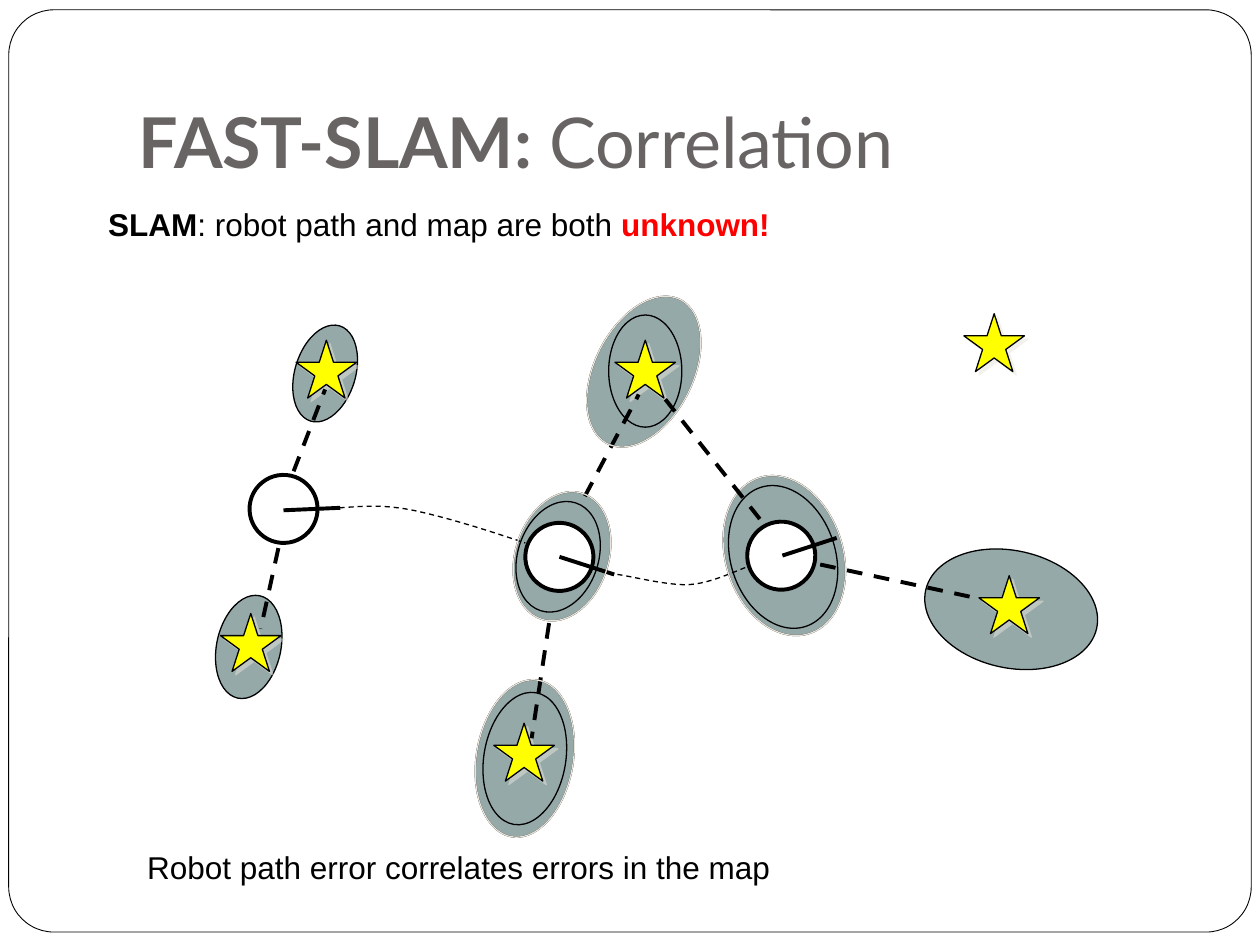
from dataclasses import dataclass
from typing import Optional

import lxml.etree
import pptx
import pptx.dml.color
import pptx.enum.dml
import pptx.enum.shapes
import pptx.enum.text
import pptx.oxml
import pptx.oxml.ns
import pptx.util

Pt = pptx.util.Pt
SHAPES = pptx.enum.shapes.MSO_SHAPE
Point = tuple[float, float]

COLORS = {"black": "000000", "white": "FFFFFF", "title": "696464", "alert": "FF0000",
          "region": "96A9A9", "star": "FFFF00", "pale": "E9E5DC"}
THIN, THICK = 0.75, 2.25
STAR_SIZE = (34.6, 33.1)
ROBOT_SIZE = 38.9


@dataclass
class Ellipse:
    left: float
    top: float
    width: float
    height: float
    rotation: float = 0
    fill: Optional[str] = "region"
    line: str = "black"
    weight: float = THIN


@dataclass
class Robot:
    left: float
    top: float
    rotation: float
    heading: tuple[Point, Point]
    fill: Optional[str] = "white"


@dataclass
class Segment:
    start: Point
    end: Point
    dashed: bool = True


@dataclass
class Path:
    """Cubic curves: a start point, then three points for each curve."""
    points: list[Point]


@dataclass
class Run:
    text: str
    bold: bool = False
    color: str = "black"


def rgb(name: str) -> pptx.dml.color.RGBColor:
    return pptx.dml.color.RGBColor.from_string(COLORS[name])


def style_line(line, color: str, weight: float, dashed: bool = False) -> None:
    line.color.rgb = rgb(color)
    line.width = Pt(weight)
    if dashed:
        line.dash_style = pptx.enum.dml.MSO_LINE.DASH


def style_shape(shape, fill: Optional[str], line: str, weight: float) -> None:
    shape.shadow.inherit = False
    if fill:
        shape.fill.solid()
        shape.fill.fore_color.rgb = rgb(fill)
    else:
        shape.fill.background()
    style_line(shape.line, line, weight)


def draw_ellipse(slide, item: Ellipse) -> None:
    shape = slide.shapes.add_shape(SHAPES.OVAL, Pt(item.left), Pt(item.top),
                                   Pt(item.width), Pt(item.height))
    shape.rotation = item.rotation
    style_shape(shape, item.fill, item.line, item.weight)


def draw_star(slide, position: Point) -> None:
    shape = slide.shapes.add_shape(SHAPES.STAR_5_POINT, *map(Pt, position + STAR_SIZE))
    style_shape(shape, "star", "black", THIN)
    effects = shape.element.spPr.find(pptx.oxml.ns.qn("a:effectLst"))
    effects.append(pptx.oxml.parse_xml(
        f'<a:outerShdw {pptx.oxml.ns.nsdecls("a")} dist="{Pt(2.8)}" dir="2700000" algn="ctr">'
        f'<a:srgbClr val="{COLORS["pale"]}"><a:alpha val="50000"/></a:srgbClr></a:outerShdw>'))


def draw_segment(slide, item: Segment) -> None:
    connector = slide.shapes.add_connector(pptx.enum.shapes.MSO_CONNECTOR.STRAIGHT,
                                           *map(Pt, item.start + item.end))
    style_line(connector.line, "black", THICK, item.dashed)
    lxml.etree.SubElement(connector.element.spPr, pptx.oxml.ns.qn("a:effectLst"))


def draw_robot(slide, item: Robot) -> None:
    draw_ellipse(slide, Ellipse(item.left, item.top, ROBOT_SIZE, ROBOT_SIZE,
                                item.rotation, item.fill, weight=THICK))
    draw_segment(slide, Segment(*item.heading, dashed=False))


def draw_path(slide, item: Path, steps: int = 12) -> None:
    samples = []
    for first in range(0, len(item.points) - 1, 3):
        curve = item.points[first:first + 4]
        for step in range(1, steps + 1):
            t = step / steps
            weights = ((1 - t) ** 3, 3 * t * (1 - t) ** 2, 3 * t * t * (1 - t), t ** 3)
            samples.append(tuple(Pt(sum(w * point[axis] for w, point in zip(weights, curve)))
                                 for axis in (0, 1)))
    builder = slide.shapes.build_freeform(*map(Pt, item.points[0]))
    builder.add_line_segments(samples, close=False)
    shape = builder.convert_to_shape()
    style_shape(shape, None, "black", THIN)
    style_line(shape.line, "black", THIN, dashed=True)


def write_runs(text_frame, runs: list[Run], font: str, size: float) -> None:
    paragraph = text_frame.paragraphs[0]
    paragraph.alignment = pptx.enum.text.PP_ALIGN.LEFT
    for item in runs:
        run = paragraph.add_run()
        run.text = item.text
        run.font.name, run.font.size, run.font.bold = font, Pt(size), item.bold
        run.font.color.rgb = rgb(item.color)


def add_caption(slide, left: float, top: float, width: float, runs: list[Run]) -> None:
    box = slide.shapes.add_textbox(Pt(left), Pt(top), Pt(width), Pt(41))
    box.text_frame.word_wrap = True
    write_runs(box.text_frame, runs, "Arial", 18)


def add_title(slide) -> None:
    title = slide.shapes.title
    title.left, title.top, title.width, title.height = Pt(72), Pt(21.6), Pt(612), Pt(90)
    frame = title.text_frame
    frame.auto_size = pptx.enum.text.MSO_AUTO_SIZE.NONE
    frame.vertical_anchor = pptx.enum.text.MSO_ANCHOR.BOTTOM
    frame.margin_bottom = Pt(7.2)
    write_runs(frame, [Run("FAST-SLAM: ", True, "title"), Run("Correlation", False, "title")],
               "Lato", 40)


def add_border(slide) -> None:
    """Rounded slide border, placed behind the title."""
    border = slide.shapes.add_shape(SHAPES.ROUNDED_RECTANGLE, Pt(5), Pt(5.6), Pt(710), Pt(527))
    border.adjustments[0] = 0.049
    style_shape(border, "white", "black", 0.5)
    slide.shapes.title.element.addprevious(border.element)


def outline(left: float, top: float, width: float, height: float, rotation: float) -> Ellipse:
    return Ellipse(left, top, width, height, rotation, None, "pale")


LOWER_REGION = (272.2, 388.1, 55.4, 90.7, 9.5)
UPPER_REGION = (339.8, 166.3, 56.2, 92.2, 26.8)
MIDDLE_POSE = (294.5, 280.1, 53.3, 75.6, 18.1)
LAST_POSE = (414.7, 270.7, 67, 93.6, 342.1)
FIRST_PATH = Path([(194, 290.2), (206.3, 289.4), (218, 288), (236, 291.6),
                   (253.4, 295.2), (277, 302.4), (300.2, 310.3)])
SECOND_PATH = Path([(352.8, 328.3), (359.3, 329), (381.6, 334.8), (393.8, 334.1),
                    (406.1, 333.4), (420.5, 326.2), (427, 324)])
LANDMARKS = [(169.2, 194.4), (126, 350.6), (282.2, 413.3),
             (351.4, 194.4), (559.4, 329), (550.8, 179.3)]
REGIONS = [Ellipse(544.3, 298.1, 67, 100.1, 102.6),
           Ellipse(*LOWER_REGION), Ellipse(276.5, 395.3, 46.8, 76.3, 9.5),
           Ellipse(*UPPER_REGION), Ellipse(347.8, 180, 41.8, 64.1),
           Ellipse(123.8, 339.8, 36.7, 59.8, 12.1), Ellipse(168.5, 185, 34.6, 56.9, 16.9)]
MOTION = [
    Robot(142.6, 271.4, 357.8, ((162, 291.6), (194.4, 290.2)), fill=None),
    Ellipse(*LAST_POSE), Ellipse(*MIDDLE_POSE),
    Segment((159.1, 313.2), (149, 359.3)), Segment((167.8, 269.3), (185.8, 222.5)),
    Segment((316.1, 340.6), (303.8, 421.9)), Segment((326.9, 297.4), (365, 225.4)),
    Ellipse(417.6, 276.5, 59.8, 83.5, 342.1),
    Robot(427, 298.1, 342.2, ((447.1, 317.5), (478.1, 307.4))),
    SECOND_PATH, outline(*LAST_POSE),
    Segment((468.7, 322.6), (555.8, 341.3)), Segment((434.2, 296.6), (380.2, 228.2)),
    outline(*UPPER_REGION), outline(*LOWER_REGION),
    Ellipse(295.9, 285.8, 46.1, 64.8, 18.1),
    Robot(300.2, 298.8, 17.9, ((319.7, 318.2), (351, 328.3))),
    FIRST_PATH, outline(*MIDDLE_POSE)]
DRAWERS = {Ellipse: draw_ellipse, Robot: draw_robot, Segment: draw_segment, Path: draw_path}


def main() -> None:
    presentation = pptx.Presentation()
    presentation.slide_width, presentation.slide_height = Pt(720), Pt(540)
    slide = presentation.slides.add_slide(presentation.slide_layouts[5])
    add_title(slide)
    add_border(slide)
    add_caption(slide, 54.7, 113.8, 611.3, [Run("SLAM", True),
                Run(": robot path and map are both "), Run("unknown!", True, "alert")])
    for region in REGIONS:
        draw_ellipse(slide, region)
    for landmark in LANDMARKS:
        draw_star(slide, landmark)
    for item in MOTION:
        DRAWERS[type(item)](slide, item)
    add_caption(slide, 77, 481, 569.5, [Run("Robot path error correlates errors in the map")])
    presentation.save("out.pptx")


if __name__ == "__main__":
    main()
